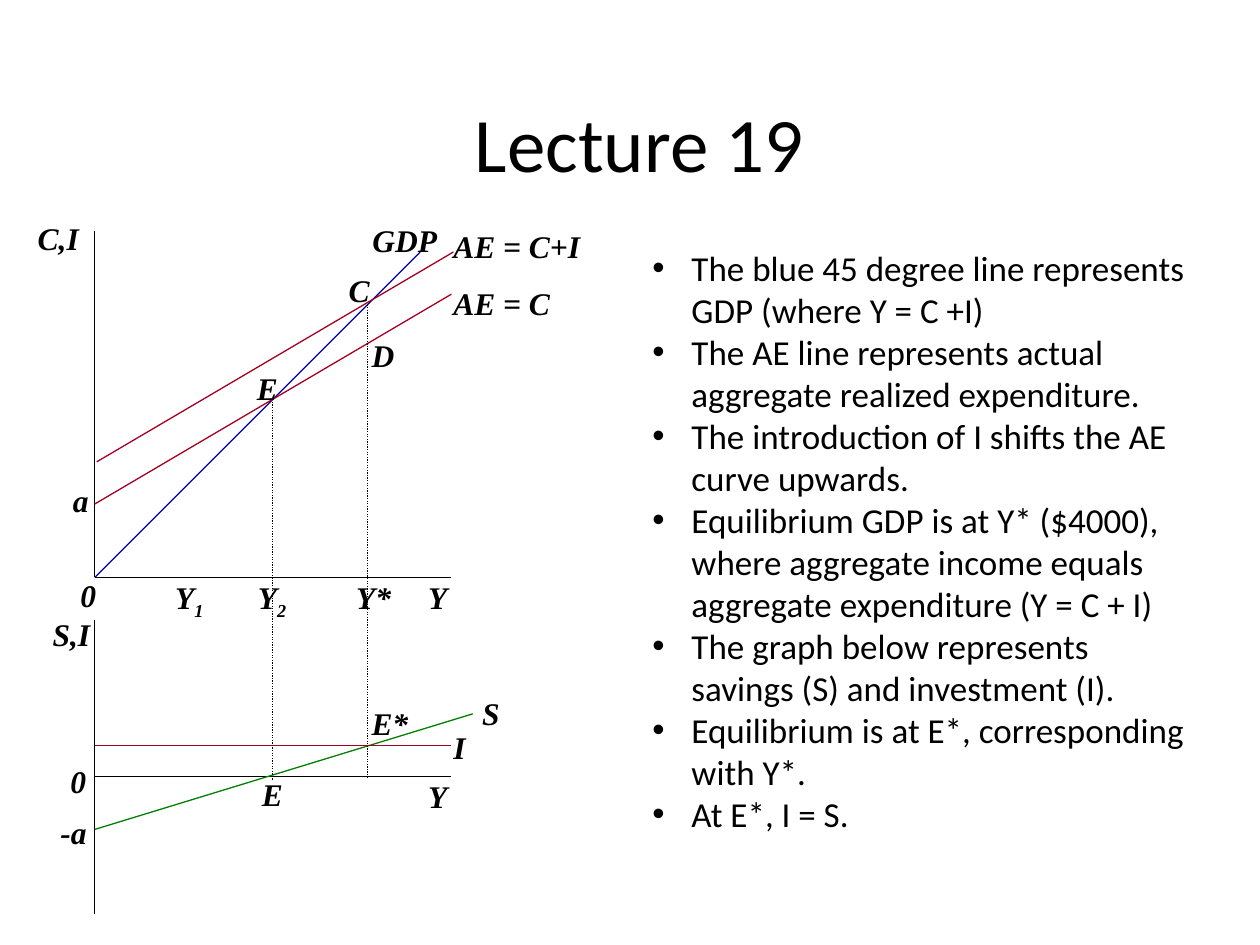
import lxml.etree
import pptx
import pptx.dml.color
import pptx.enum.dml
import pptx.enum.shapes
import pptx.enum.text
import pptx.oxml.ns
import pptx.util

Cm = pptx.util.Cm
Pt = pptx.util.Pt
qn = pptx.oxml.ns.qn

BLACK = pptx.dml.color.RGBColor(0x00, 0x00, 0x00)
BLUE = pptx.dml.color.RGBColor(0x00, 0x00, 0x99)
RED = pptx.dml.color.RGBColor(0xA5, 0x00, 0x21)
GREEN = pptx.dml.color.RGBColor(0x00, 0x80, 0x00)

AXIS_X = 1.91
AXIS_END = 9.1
INCOME_AXIS = 11.64
SAVING_AXIS = 15.66
INVESTMENT = 15.03
Y2_X = 5.5
Y_STAR_X = 7.41

LINES = [
    (AXIS_X, INCOME_AXIS, AXIS_END, INCOME_AXIS, BLACK),
    (AXIS_X, SAVING_AXIS, AXIS_END, SAVING_AXIS, BLACK),
    (AXIS_X, INCOME_AXIS, AXIS_X, 4.66, BLACK),
    (AXIS_X, 18.42, AXIS_X, 12.49, BLACK),
    (AXIS_X, INCOME_AXIS, 8.47, 5.08, BLUE),
    (AXIS_X, 10.16, AXIS_END, 5.93, RED),
    (1.95, 9.31, 9.14, 5.08, RED),
    (AXIS_X, 16.72, 9.53, 14.39, GREEN),
    (AXIS_X, INVESTMENT, AXIS_END, INVESTMENT, RED),
]

DOTTED_LINES = [
    (Y2_X, 8.1, Y2_X, 15.72, BLACK),
    (Y_STAR_X, 6.14, Y_STAR_X, SAVING_AXIS, BLACK),
]

LABELS = [
    ("Y", 3.28, 11.53, 1.1, "1"),
    ("Y", 4.95, 11.53, 1.1, "2"),
    ("Y*", 6.93, 11.53, 1.22),
    ("Y", 8.38, 11.53, 0.89),
    ("Y", 8.38, 15.54, 0.89),
    ("S", 9.47, 13.87, 0.86),
    ("AE = C", 8.89, 5.61, 2.49),
    ("GDP", 7.26, 4.34, 1.83),
    ("S,I", 0.81, 12.27, 1.27),
    ("0", 1.37, 11.48, 0.84),
    ("0", 1.17, 15.24, 0.84),
    ("-a", 0.97, 16.26, 1.04),
    ("a", 1.22, 9.58, 0.84),
    ("C,I", 0.51, 4.29, 1.35),
    ("E", 4.93, 7.32, 0.94),
    ("E", 5.03, 15.49, 0.94),
    ("E*", 7.24, 14.07, 1.27),
    ("C", 6.78, 5.33, 0.94),
    ("D", 7.24, 6.65, 0.97),
    ("AE = C+I", 8.89, 4.45, 3.1),
    ("I", 8.89, 14.55, 0.76),
]

POINTS = [
    "The blue 45 degree line represents GDP (where Y = C +I)",
    "The AE line represents actual aggregate realized expenditure.",
    "The introduction of I shifts the AE curve upwards.",
    "Equilibrium GDP is at Y* ($4000), where aggregate income equals "
    "aggregate expenditure (Y = C + I)",
    "The graph below represents savings (S) and investment (I).",
    "Equilibrium is at E*, corresponding with Y*.",
    "At E*, I = S.",
]


class LecturePage:
    text_font = "Calibri"
    label_font = "Times New Roman"
    line_width = Pt(0.75)

    def __init__(self, deck):
        self.page = deck.slides.add_slide(deck.slide_layouts[6])

    def text_frame(self, left, top, width, height, wrap=True):
        box = self.page.shapes.add_textbox(
            Cm(left), Cm(top), Cm(width), Cm(height))
        box.text_frame.word_wrap = wrap
        return box.text_frame

    def set_font(self, para, name, size, slanted_bold=False):
        para.font.name = name
        para.font.size = Pt(size)
        para.font.bold = slanted_bold
        para.font.italic = slanted_bold
        para.font.color.rgb = BLACK

    def title(self, text, left, top, width, height):
        frame = self.text_frame(left, top, width, height)
        frame.vertical_anchor = pptx.enum.text.MSO_ANCHOR.MIDDLE
        para = frame.paragraphs[0]
        para.text = text
        para.alignment = pptx.enum.text.PP_ALIGN.CENTER
        self.set_font(para, self.text_font, 44)

    def line(self, x1, y1, x2, y2, color, dotted=False):
        line = self.page.shapes.add_connector(
            pptx.enum.shapes.MSO_CONNECTOR.STRAIGHT,
            Cm(x1), Cm(y1), Cm(x2), Cm(y2))
        line.line.color.rgb = color
        line.line.width = self.line_width
        if dotted:
            line.line.dash_style = pptx.enum.dml.MSO_LINE.ROUND_DOT
        lxml.etree.SubElement(line._element.spPr, qn("a:effectLst"))

    def label(self, text, left, top, width, subscript=None):
        frame = self.text_frame(left, top, width, 1.02, wrap=False)
        para = frame.paragraphs[0]
        para.add_run().text = text
        if subscript:
            span = para.add_run()
            span.text = subscript
            span._r.get_or_add_rPr().set("baseline", "-25000")
        self.set_font(para, self.label_font, 18, slanted_bold=True)

    def bullets(self, points, left, top, width, height):
        frame = self.text_frame(left, top, width, height)
        for index, point in enumerate(points):
            para = frame.add_paragraph() if index else frame.paragraphs[0]
            para.text = point
            properties = para._p.get_or_add_pPr()
            properties.set("marL", str(Cm(0.79)))
            properties.set("indent", str(-Cm(0.79)))
            font = lxml.etree.SubElement(properties, qn("a:buFont"))
            font.set("typeface", "Arial")
            bullet = lxml.etree.SubElement(properties, qn("a:buChar"))
            bullet.set("char", "•")
            self.set_font(para, self.text_font, 20)


def main():
    deck = pptx.Presentation()
    deck.slide_width = Cm(25.4)
    deck.slide_height = Cm(19.05)
    lecture = LecturePage(deck)
    lecture.title("Lecture 19", 2.1, 1.27, 21.59, 3.17)
    for line in LINES:
        lecture.line(*line)
    for line in DOTTED_LINES:
        lecture.line(*line, dotted=True)
    for label in LABELS:
        lecture.label(*label)
    lecture.bullets(POINTS, 12.9, 4.85, 11.43, 12.22)
    deck.save("out.pptx")


if __name__ == "__main__":
    main()
